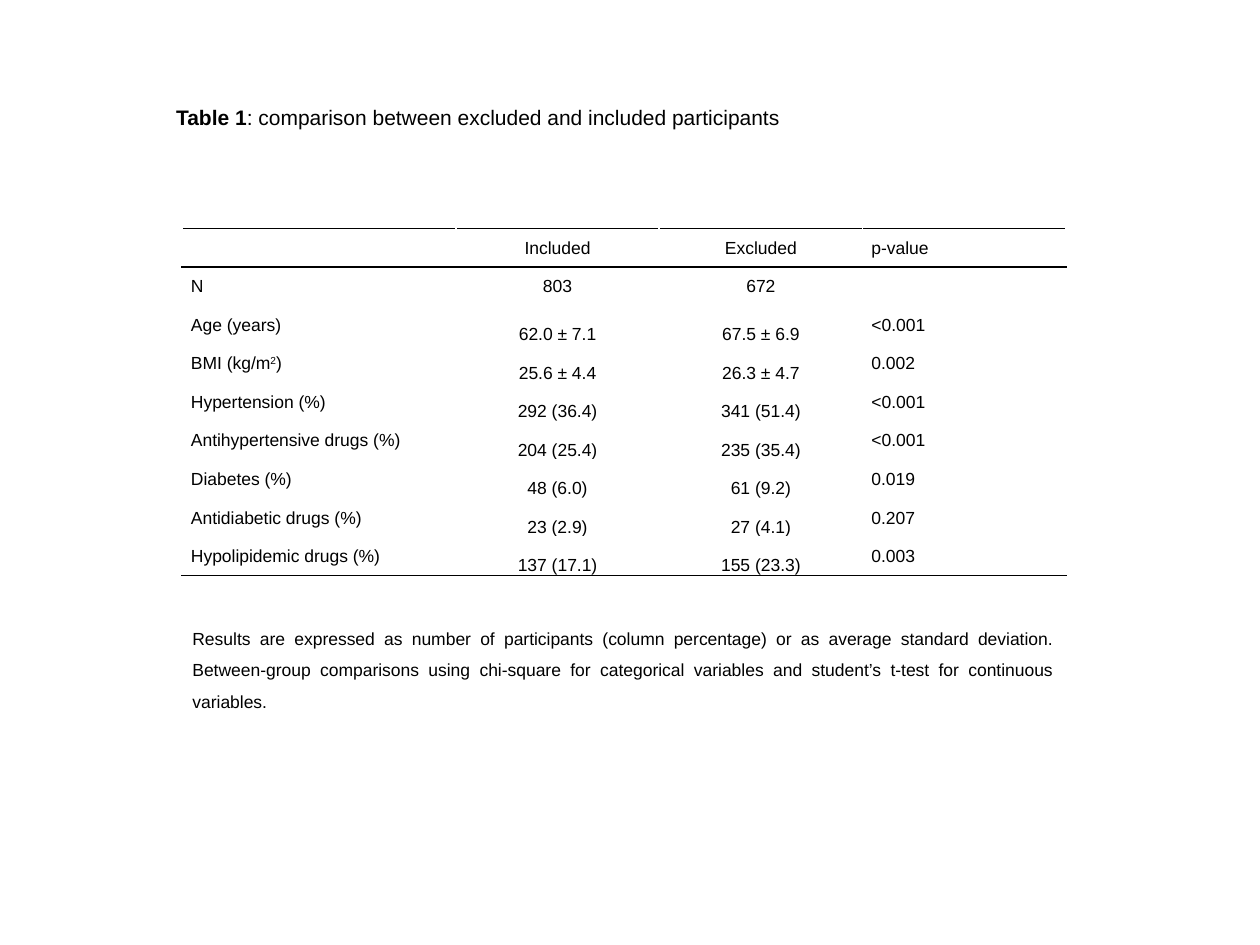
from lxml import etree
from pptx import Presentation
from pptx.dml.color import RGBColor
from pptx.enum import text
from pptx.oxml import ns
from pptx.util import Cm, Pt

COLORS = {"ink": "000000"}
ALIGN = text.PP_ALIGN
ANCHOR = text.MSO_ANCHOR


class TableSlide:
    font_name = "Arial"
    line_spacing = 1.5
    rule_width = Pt(1)
    cell_format = {
        "margin_left": Cm(0.18),
        "margin_right": Cm(0.18),
        "margin_top": 0,
        "margin_bottom": 0,
    }

    def __init__(self, deck):
        self.slide = deck.slides.add_slide(deck.slide_layouts[6])

    def set_runs(self, frame, runs, align=ALIGN.LEFT, size=10):
        paragraph = frame.paragraphs[0]
        paragraph.alignment = align
        paragraph.line_spacing = self.line_spacing
        for words, style in runs:
            run = paragraph.add_run()
            run.text = words
            font = {"name": self.font_name, "size": Pt(size), "bold": style == "bold"}
            for key, value in font.items():
                setattr(run.font, key, value)
            run.font.color.rgb = RGBColor.from_string(COLORS["ink"])
            if style == "super":
                run._r.get_or_add_rPr().set("baseline", "30000")

    def text_box(self, left, top, width, height, runs, align=ALIGN.LEFT, size=10):
        frame = self.slide.shapes.add_textbox(
            Cm(left), Cm(top), Cm(width), Cm(height)
        ).text_frame
        frame.word_wrap = True
        frame.auto_size = text.MSO_AUTO_SIZE.SHAPE_TO_FIT_TEXT
        self.set_runs(frame, runs, align, size)

    def rule(self, cell, side):
        line = etree.SubElement(
            cell._tc.get_or_add_tcPr(), ns.qn(f"a:{side}"), w=str(self.rule_width)
        )
        fill = etree.SubElement(line, ns.qn("a:solidFill"))
        etree.SubElement(fill, ns.qn("a:srgbClr"), val=COLORS["ink"])

    def table(self, left, top, widths, height, rows):
        last = len(rows) - 1
        table = self.slide.shapes.add_table(
            len(rows), len(widths), Cm(left), Cm(top), Cm(sum(widths)), Cm(height)
        ).table
        table.first_row = table.horz_banding = False
        for column, width in zip(table.columns, widths):
            column.width = Cm(width)
        for r, row in enumerate(rows):
            table.rows[r].height = Cm(height / len(rows))
            for c, runs in enumerate(row):
                cell = table.cell(r, c)
                centred = c in (1, 2)
                anchor = ANCHOR.BOTTOM if centred and r > 1 else ANCHOR.TOP
                for key, value in {**self.cell_format, "vertical_anchor": anchor}.items():
                    setattr(cell, key, value)
                if r in (0, 1):
                    self.rule(cell, "lnT")
                if r in (0, last):
                    self.rule(cell, "lnB")
                cell.fill.background()
                if isinstance(runs, str):
                    runs = [(runs, "plain")] if runs else []
                align = ALIGN.CENTER if centred else ALIGN.LEFT
                self.set_runs(cell.text_frame, runs, align)


def main():
    deck = Presentation()
    deck.slide_width, deck.slide_height = Cm(25.4), Cm(19.05)
    page = TableSlide(deck)

    bmi = [("BMI (kg/m", "plain"), ("2", "super"), (")", "plain")]
    participants = [
        ("", "Included", "Excluded", "p-value"),
        ("N", "803", "672", ""),
        ("Age (years)", "62.0 ± 7.1", "67.5 ± 6.9", "<0.001"),
        (bmi, "25.6 ± 4.4", "26.3 ± 4.7", "0.002"),
        ("Hypertension (%)", "292 (36.4)", "341 (51.4)", "<0.001"),
        ("Antihypertensive drugs (%)", "204 (25.4)", "235 (35.4)", "<0.001"),
        ("Diabetes (%)", "48 (6.0)", "61 (9.2)", "0.019"),
        ("Antidiabetic drugs (%)", "23 (2.9)", "27 (4.1)", "0.207"),
        ("Hypolipidemic drugs (%)", "137 (17.1)", "155 (23.3)", "0.003"),
    ]
    page.table(3.67, 4.61, [5.52, 4.1, 4.1, 4.1], 7, participants)

    footnote = (
        "Results are expressed as number of participants (column percentage) "
        "or as average standard deviation. Between-group comparisons using "
        "chi-square for categorical variables and student’s t-test for "
        "continuous variables."
    )
    page.text_box(3.63, 12.32, 17.83, 2.95, [(footnote, "plain")], ALIGN.JUSTIFY)

    caption = [
        ("Table 1", "bold"),
        (": comparison between excluded and included participants", "plain"),
    ]
    page.text_box(3.3, 1.73, 18, 0.94, caption, size=12)

    deck.save("out.pptx")


if __name__ == "__main__":
    main()
